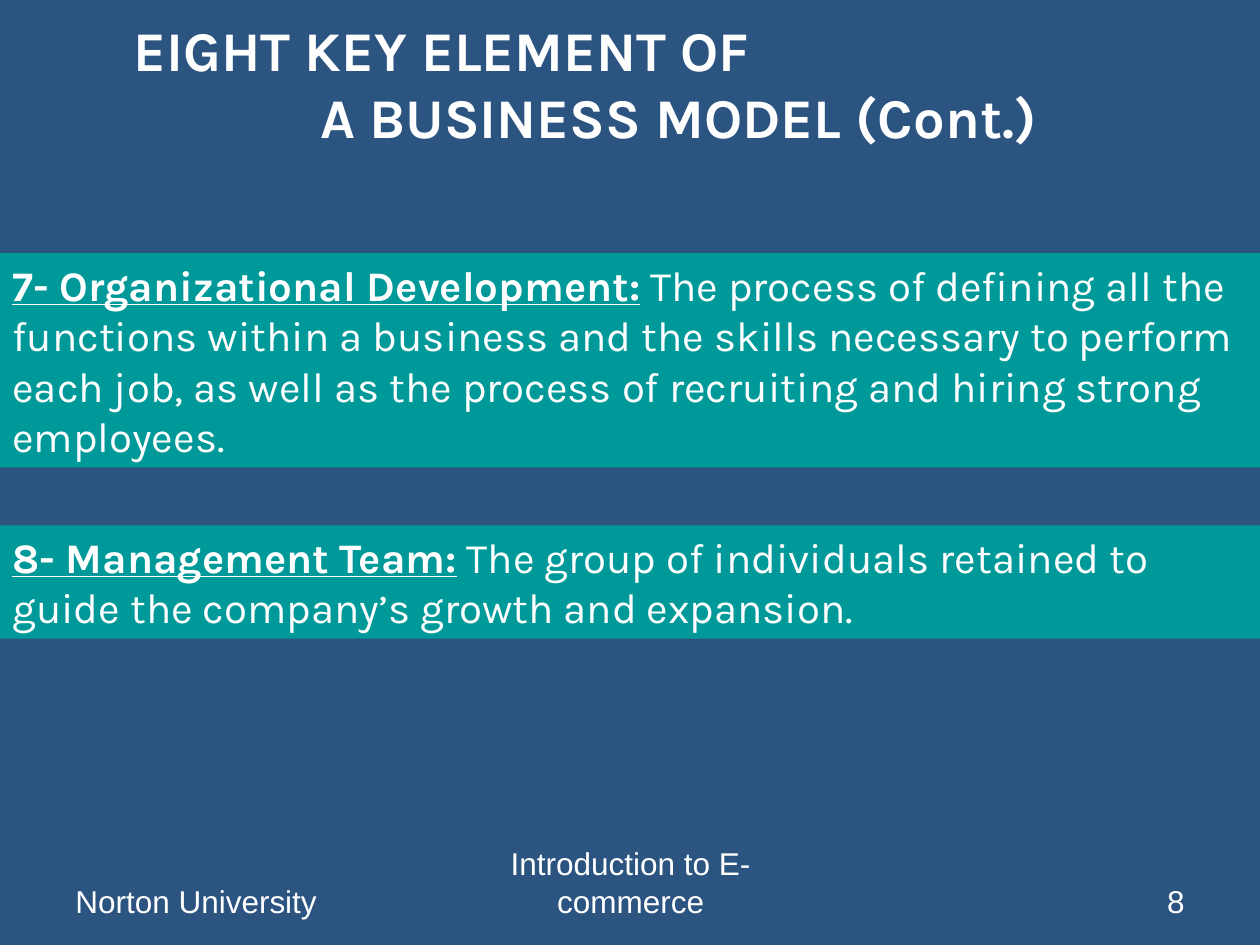
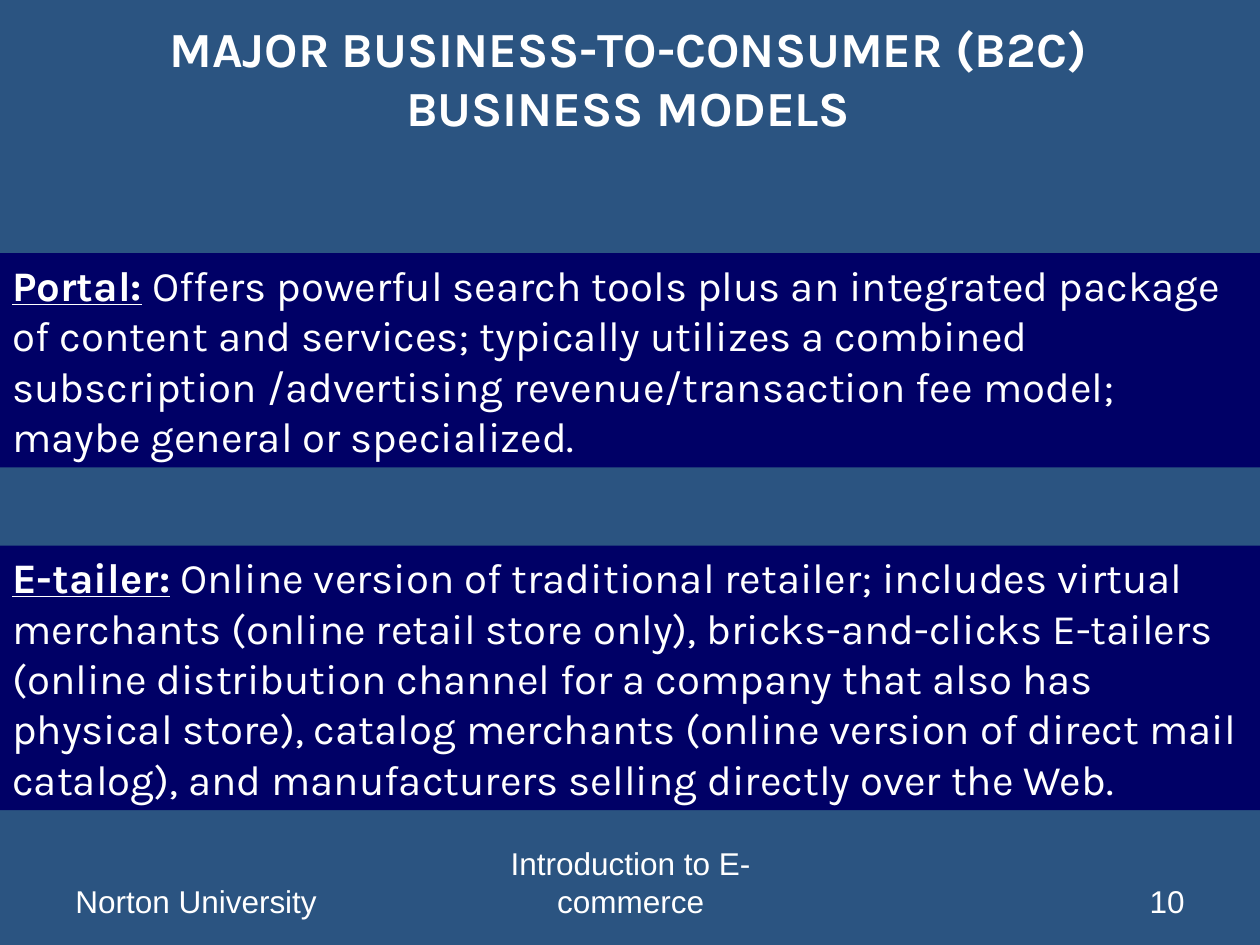
"""Build two e-commerce lecture slides with shared bands, titles and footers."""
from pptx import Presentation
from pptx.dml.color import RGBColor
from pptx.enum.shapes import MSO_SHAPE
from pptx.enum.text import MSO_ANCHOR, MSO_AUTO_SIZE, PP_ALIGN
from pptx.util import Inches, Pt

BLUE = RGBColor(0x2B, 0x54, 0x81)
TEAL = RGBColor(0x00, 0x99, 0x99)
NAVY = RGBColor(0x00, 0x00, 0x66)
WHITE = RGBColor(0xFF, 0xFF, 0xFF)
LEFT, CENTER, RIGHT = PP_ALIGN.LEFT, PP_ALIGN.CENTER, PP_ALIGN.RIGHT
TOP, BOTTOM = MSO_ANCHOR.TOP, MSO_ANCHOR.BOTTOM
RECTANGLE = MSO_SHAPE.RECTANGLE
NO_AUTOFIT = MSO_AUTO_SIZE.NONE

WIDTH, HEIGHT = 10, 7.5
FOOTER_TOP, FOOTER_HEIGHT = 6.83 / HEIGHT, 0.52 / HEIGHT
BAND_PADDING, LINE_HEIGHT = 0.1, 0.4

TITLE_FORMAT = {"name": "Karla", "bold": True}
TERM_FORMAT = {"name": "Karla", "size": Pt(24), "bold": True, "underline": True}
MEANING_FORMAT = {"name": "Karla", "size": Pt(24), "bold": False}
FOOTER_FORMAT = {"name": "Arial", "size": Pt(18)}


def share_box(left, top, width, height):
    """Turn shares of the slide's size into lengths."""
    return (Inches(left * WIDTH), Inches(top * HEIGHT),
            Inches(width * WIDTH), Inches(height * HEIGHT))


def write_text(shape, anchor, paragraphs):
    """Fill a shape with paragraphs of alignment, left margin and formatted runs."""
    frame = shape.text_frame
    frame.word_wrap = True
    frame.auto_size = NO_AUTOFIT
    frame.vertical_anchor = anchor
    for number, (alignment, margin, runs) in enumerate(paragraphs):
        paragraph = frame.add_paragraph() if number else frame.paragraphs[0]
        paragraph.alignment = alignment
        paragraph.space_before = Pt(0)
        if margin:
            paragraph._p.get_or_add_pPr().set("marL", str(Inches(margin)))
        for text, font_format in runs:
            run = paragraph.add_run()
            run.text = text
            run.font.color.rgb = WHITE
            for attribute, value in font_format.items():
                setattr(run.font, attribute, value)


SLIDES = [
    {
        "number": "8",
        "title_box": (0.096, 0.01, 0.82, 0.156),
        "title_size": 32,
        "title_lines": [
            (LEFT, 0, "EIGHT KEY ELEMENT OF"),
            (LEFT, 1.48, "A BUSINESS MODEL (Cont.)"),
        ],
        "band_color": TEAL,
        "bands": [
            (2.01, 4, "7- Organizational Development:",
             "The process of defining all the functions within a business and "
             "the skills necessary to perform each job, as well as the process "
             "of recruiting and hiring strong employees."),
            (4.17, 2, "8- Management Team:",
             "The group of individuals retained to guide the company’s growth "
             "and expansion."),
        ],
    },
    {
        "number": "10",
        "title_box": (0.061, 0.013, 0.875, 0.137),
        "title_size": 28,
        "title_lines": [
            (CENTER, 0, "MAJOR BUSINESS-TO-CONSUMER (B2C) BUSINESS MODELS"),
        ],
        "band_color": NAVY,
        "bands": [
            (2.01, 4, "Portal:",
             "Offers powerful search tools plus an integrated package of content "
             "and services; typically utilizes a combined subscription "
             "/advertising revenue/transaction fee model; maybe general or "
             "specialized."),
            (4.33, 5, "E-tailer:",
             "Online version of traditional retailer; includes virtual merchants "
             "(online retail store only), bricks-and-clicks E-tailers (online "
             "distribution channel for a company that also has physical store), "
             "catalog merchants (online version of direct mail catalog), and "
             "manufacturers selling directly over the Web."),
        ],
    },
]

presentation = Presentation()
presentation.slide_width, presentation.slide_height = Inches(WIDTH), Inches(HEIGHT)
background = presentation.slide_master.background.fill
background.solid()
background.fore_color.rgb = BLUE
title_only = presentation.slide_layouts.get_by_name("Title Only")

for content in SLIDES:
    slide = presentation.slides.add_slide(title_only)

    title = slide.shapes.title
    title.left, title.top, title.width, title.height = share_box(*content["title_box"])
    title_format = {**TITLE_FORMAT, "size": Pt(content["title_size"])}
    write_text(title, TOP, [(alignment, margin, [(text, title_format)])
                            for alignment, margin, text in content["title_lines"]])

    for top, line_count, term, meaning in content["bands"]:
        band_height = BAND_PADDING + line_count * LINE_HEIGHT
        band = slide.shapes.add_shape(
            RECTANGLE, *share_box(0, top / HEIGHT, 1, band_height / HEIGHT))
        band.shadow.inherit = False
        band.fill.solid()
        band.fill.fore_color.rgb = content["band_color"]
        band.line.fill.background()
        write_text(band, TOP, [(LEFT, 0, [(term, TERM_FORMAT),
                                          (" " + meaning, MEANING_FORMAT)])])

    for left, width, alignment, text in [
        (0.05, 0.233, LEFT, "Norton University"),
        (0.342, 0.317, CENTER, "Introduction to E-commerce"),
        (0.717, 0.233, RIGHT, content["number"]),
    ]:
        footer = slide.shapes.add_textbox(
            *share_box(left, FOOTER_TOP, width, FOOTER_HEIGHT))
        write_text(footer, BOTTOM, [(alignment, 0, [(text, FOOTER_FORMAT)])])

presentation.save("out.pptx")
